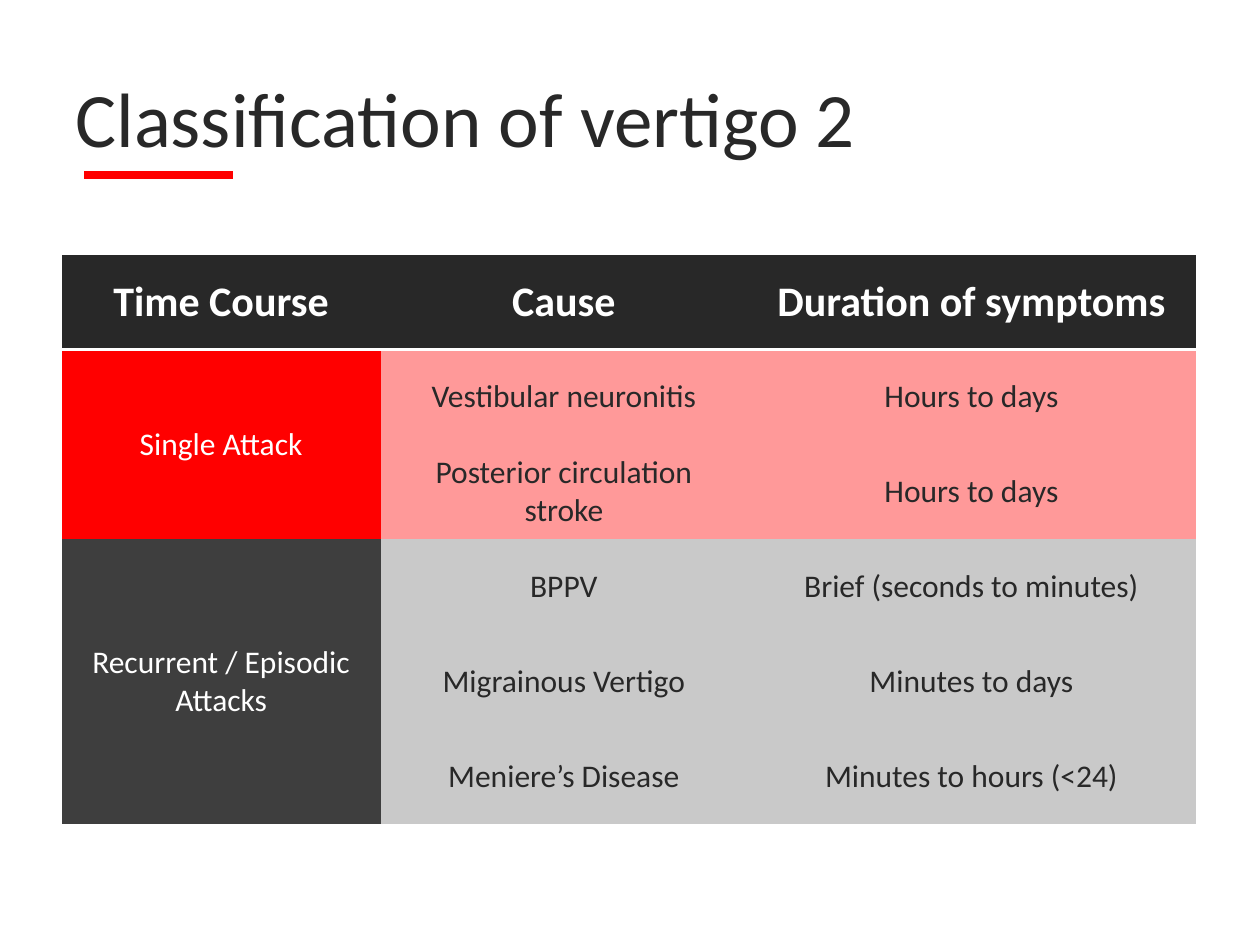
"""Build the slide that classifies vertigo by time course, cause and duration."""
from lxml import etree
from pptx import Presentation
from pptx.dml.color import RGBColor
from pptx.enum.shapes import MSO_CONNECTOR
from pptx.enum.text import MSO_ANCHOR as Anchor, PP_ALIGN as Align
from pptx.oxml import parse_xml
from pptx.oxml.ns import nsdecls, qn
from pptx.util import Inches, Pt

INK = RGBColor(0x28, 0x28, 0x28)
WHITE = RGBColor(0xFF, 0xFF, 0xFF)
RED = RGBColor(0xFF, 0x00, 0x00)
PINK = RGBColor(0xFF, 0x99, 0x99)
CHARCOAL = RGBColor(0x3E, 0x3E, 0x3E)
GREY = RGBColor(0xC9, 0xC9, 0xC9)
NO_GRID_STYLE = "{2D5ABB26-0587-4C30-8999-92F81FD0307C}"

HEADINGS = ["Time Course", "Cause", "Duration of symptoms"]
COURSES = [
    ("Single Attack", RED, PINK, [
        ("Vestibular neuronitis", "Hours to days"),
        ("Posterior circulation stroke", "Hours to days"),
    ]),
    ("Recurrent / Episodic Attacks", CHARCOAL, GREY, [
        ("BPPV", "Brief (seconds to minutes)"),
        ("Migrainous Vertigo", "Minutes to days"),
        ("Meniere’s Disease", "Minutes to hours (<24)"),
    ]),
]
COLUMN_WIDTHS = [2.53, 2.91, 3.56]
ROW_HEIGHT = 4.52 / 6


def style_text(paragraph, size, color, bold=False):
    font = paragraph.font
    font.name, font.size, font.bold = "Calibri", Pt(size), bold
    font.color.rgb = color


def fill_cell(cell, text, fill, color, size=18, bold=False):
    cell.text = text
    cell.vertical_anchor = Anchor.MIDDLE
    cell.fill.solid()
    cell.fill.fore_color.rgb = fill
    paragraph = cell.text_frame.paragraphs[0]
    paragraph.alignment = Align.CENTER
    style_text(paragraph, size, color, bold)


prs = Presentation()
prs.slide_width, prs.slide_height = Inches(10), Inches(7.5)
slide = prs.slides.add_slide(prs.slide_layouts[6])

title = slide.shapes.add_textbox(Inches(0.5), Inches(0.3), Inches(9), Inches(1.25)).text_frame
title.word_wrap = True
title.vertical_anchor = Anchor.MIDDLE
title.text = "Classification of vertigo 2"
style_text(title.paragraphs[0], 44, INK)

accent = slide.shapes.add_connector(
    MSO_CONNECTOR.STRAIGHT, Inches(0.67), Inches(1.39), Inches(1.85), Inches(1.39))
accent.line.color.rgb = RED
accent.line.width = Pt(4.5)
etree.SubElement(accent._element.spPr, qn("a:effectLst"))

table = slide.shapes.add_table(
    6, 3, Inches(0.49), Inches(2.02), Inches(9), Inches(6 * ROW_HEIGHT)).table
table.horz_banding = False
table._tbl.tblPr.find(qn("a:tableStyleId")).text = NO_GRID_STYLE
for column, width in zip(table.columns, COLUMN_WIDTHS):
    column.width = Inches(width)
for row in table.rows:
    row.height = Inches(ROW_HEIGHT)

for column, heading in enumerate(HEADINGS):
    header = table.cell(0, column)
    fill_cell(header, heading, INK, WHITE, size=24, bold=True)
    header._tc.get_or_add_tcPr().insert(0, parse_xml(
        f'<a:lnB {nsdecls("a")} w="{Pt(2)}"><a:solidFill>'
        f'<a:srgbClr val="{WHITE}"/></a:solidFill></a:lnB>'))

first = 1
for course, course_fill, detail_fill, causes in COURSES:
    last = first + len(causes) - 1
    table.cell(first, 0).merge(table.cell(last, 0))
    fill_cell(table.cell(first, 0), course, course_fill, WHITE)
    for row, details in enumerate(causes, first):
        for column, detail in enumerate(details, 1):
            fill_cell(table.cell(row, column), detail, detail_fill, INK)
    first = last + 1

prs.save("out.pptx")
